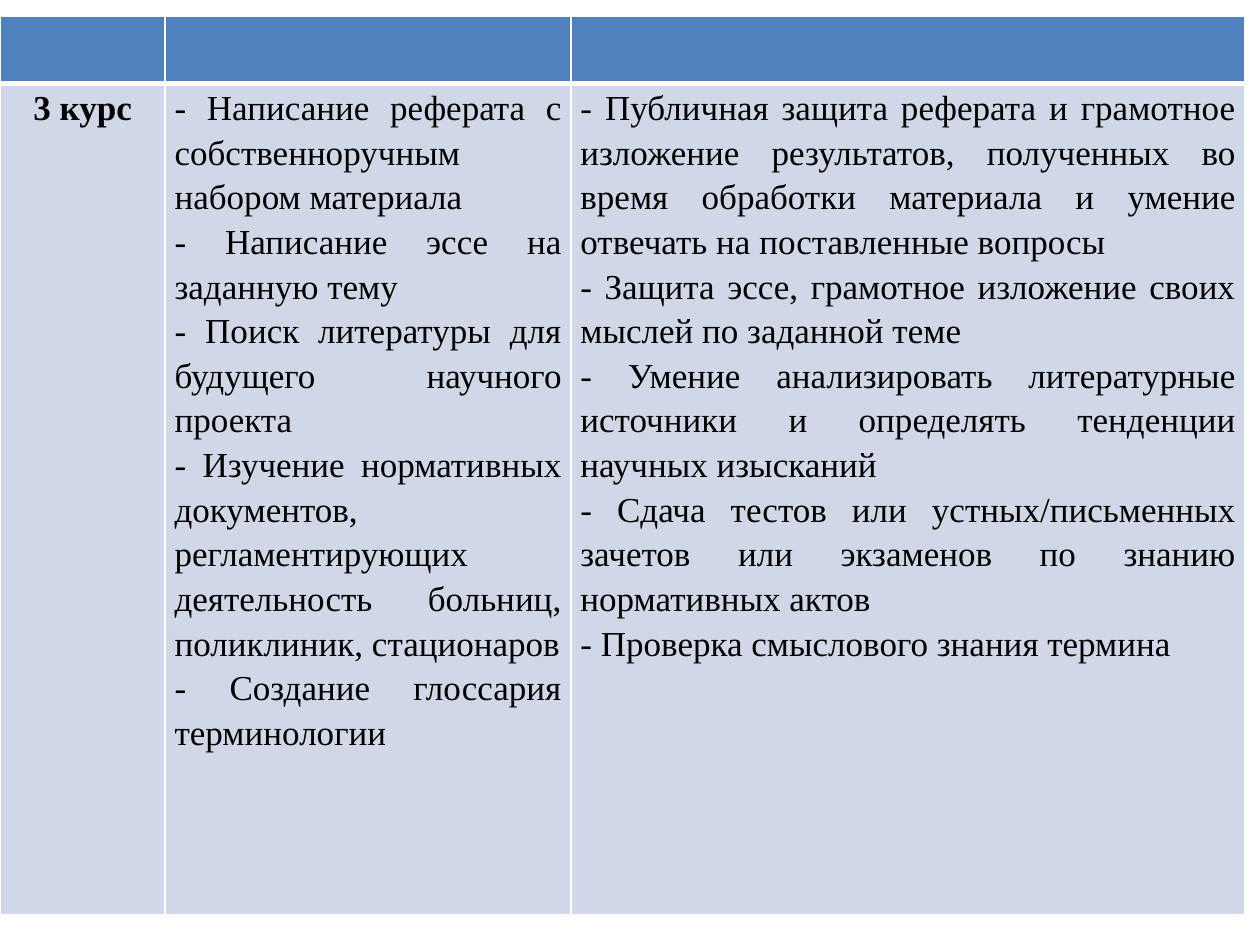
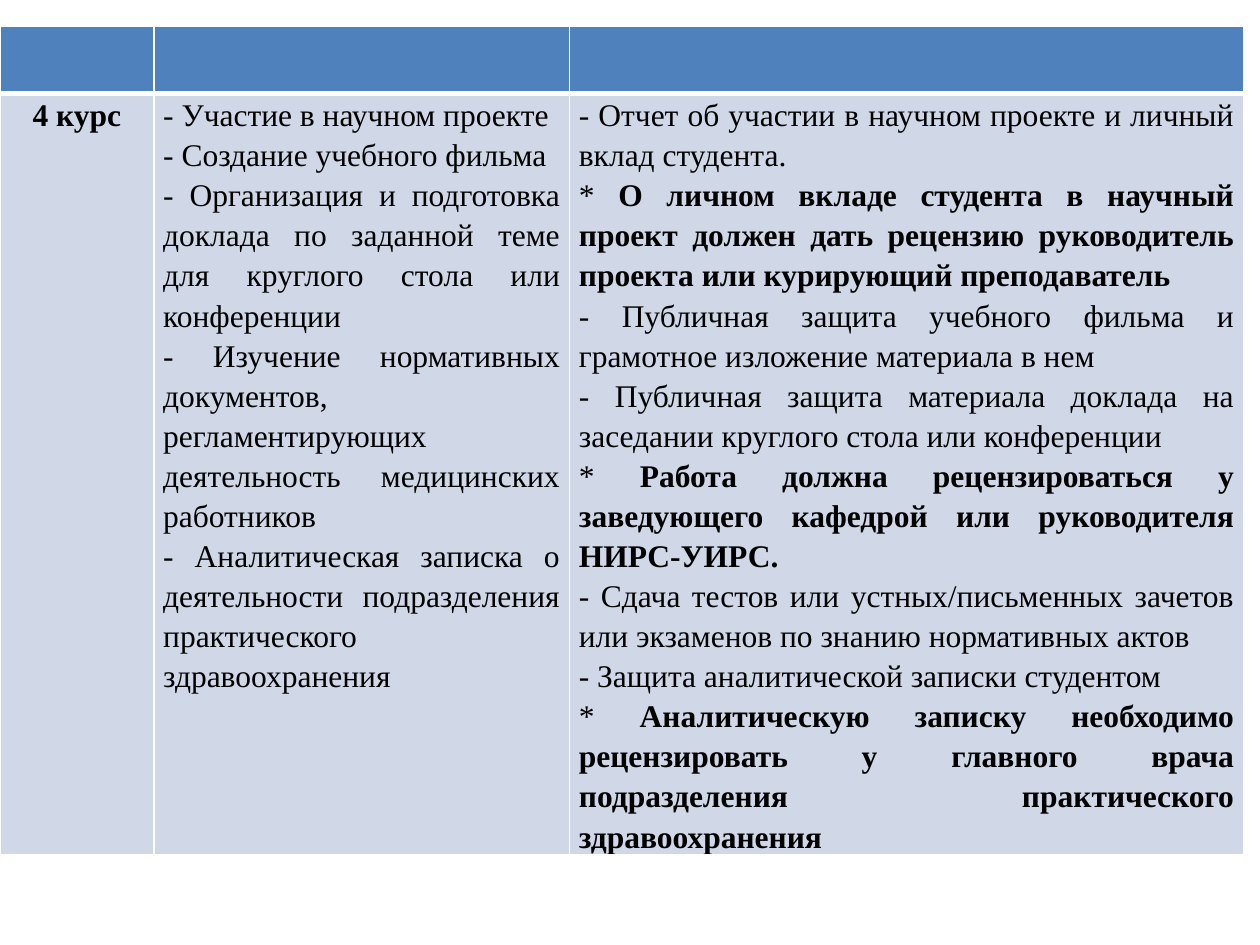
from lxml import etree
from pptx import Presentation
from pptx import util as u
from pptx.dml.color import RGBColor
from pptx.enum import text
from pptx.oxml import ns

HEADER_BLUE = RGBColor(0x4F, 0x81, 0xBD)
BODY_BLUE = RGBColor(0xD0, 0xD8, 0xE8)
BLACK = RGBColor(0, 0, 0)
WHITE = RGBColor(0xFF, 0xFF, 0xFF)
FONT = "Times New Roman"
HEADER_HEIGHT = 1.35

COURSES = [
    {
        "course": "3 курс",
        "size": 20,
        "top": 0.33,
        "columns": [3.33, 8.18, 13.59],
        "height": 16.76,
        "tasks": [
            "- Написание реферата с собственноручным набором материала",
            "- Написание эссе на заданную тему",
            "- Поиск литературы для будущего научного проекта",
            "- Изучение нормативных документов, регламентирующих деятельность больниц, поликлиник, стационаров",
            "- Создание глоссария терминологии",
        ],
        "checks": [
            "- Публичная защита реферата и грамотное изложение результатов, полученных во время обработки материала и умение отвечать на поставленные вопросы",
            "- Защита эссе, грамотное изложение своих мыслей по заданной теме",
            "- Умение анализировать литературные источники и определять тенденции научных изысканий",
            "- Сдача тестов или устных/письменных зачетов или экзаменов по знанию нормативных актов",
            "- Проверка смыслового знания термина",
        ],
    },
    {
        "course": "4 курс",
        "size": 18,
        "top": 0.53,
        "columns": [3.1, 8.38, 13.59],
        "height": 15.19,
        "tasks": [
            "- Участие в научном проекте",
            "- Создание учебного фильма",
            "- Организация и подготовка доклада по заданной теме для круглого стола или конференции",
            "- Изучение нормативных документов, регламентирующих деятельность медицинских работников",
            "- Аналитическая записка о деятельности подразделения практического здравоохранения",
        ],
        "checks": [
            "- Отчет об участии в научном проекте и личный вклад студента.",
            "* О личном вкладе студента в научный проект должен дать рецензию руководитель проекта или курирующий преподаватель",
            "- Публичная защита учебного фильма и грамотное изложение материала в нем",
            "- Публичная защита материала доклада на заседании круглого стола или конференции",
            "* Работа должна рецензироваться у заведующего кафедрой или руководителя НИРС-УИРС.",
            "- Сдача тестов или устных/письменных зачетов или экзаменов по знанию нормативных актов",
            "- Защита аналитической записки студентом",
            "* Аналитическую записку необходимо рецензировать у главного врача подразделения практического здравоохранения",
        ],
    },
]


def paint_cell(cell, color, top_width, bottom_width):
    properties = cell._tc.get_or_add_tcPr()
    for side, width in (("L", 1), ("R", 1), ("T", top_width), ("B", bottom_width)):
        border = etree.SubElement(properties, ns.qn(f"a:ln{side}"), w=str(u.Pt(width)))
        fill = etree.SubElement(border, ns.qn("a:solidFill"))
        etree.SubElement(fill, ns.qn("a:srgbClr"), val=str(WHITE))
    cell.fill.solid()
    cell.fill.fore_color.rgb = color


def write_cell(cell, lines, size, alignment, bold):
    cell.margin_left = cell.margin_right = u.Cm(0.19)
    cell.margin_top = cell.margin_bottom = 0
    cell.text_frame.text = "\n".join(lines)
    for paragraph in cell.text_frame.paragraphs:
        paragraph.alignment = alignment
        paragraph.line_spacing = 1.15
        if paragraph.text.startswith("* "):
            remark = paragraph.text[2:]
            paragraph.runs[0].text = "* "
            paragraph.add_run().text = remark
        for index, run in enumerate(paragraph.runs):
            run.font.name = FONT
            run.font.size = u.Pt(size)
            run.font.bold = bold or index > 0
            run.font.color.rgb = BLACK


deck = Presentation()
deck.slide_width, deck.slide_height = u.Cm(25.4), u.Cm(19.05)

for course in COURSES:
    slide = deck.slides.add_slide(deck.slide_layouts[6])
    plan = slide.shapes.add_table(
        2, 3, 0, u.Cm(course["top"]), u.Cm(sum(course["columns"])),
        u.Cm(HEADER_HEIGHT + course["height"]),
    ).table
    for column, width in zip(plan.columns, course["columns"]):
        column.width = u.Cm(width)
    plan.rows[0].height = u.Cm(HEADER_HEIGHT)
    plan.rows[1].height = u.Cm(course["height"])

    contents = [[course["course"]], course["tasks"], course["checks"]]
    for index, lines in enumerate(contents):
        paint_cell(plan.cell(0, index), HEADER_BLUE, 1, 3)
        paint_cell(plan.cell(1, index), BODY_BLUE, 3, 1)
        is_course = index == 0
        alignment = text.PP_ALIGN.CENTER if is_course else text.PP_ALIGN.JUSTIFY
        write_cell(plan.cell(1, index), lines, course["size"], alignment, is_course)

deck.save("out.pptx")
